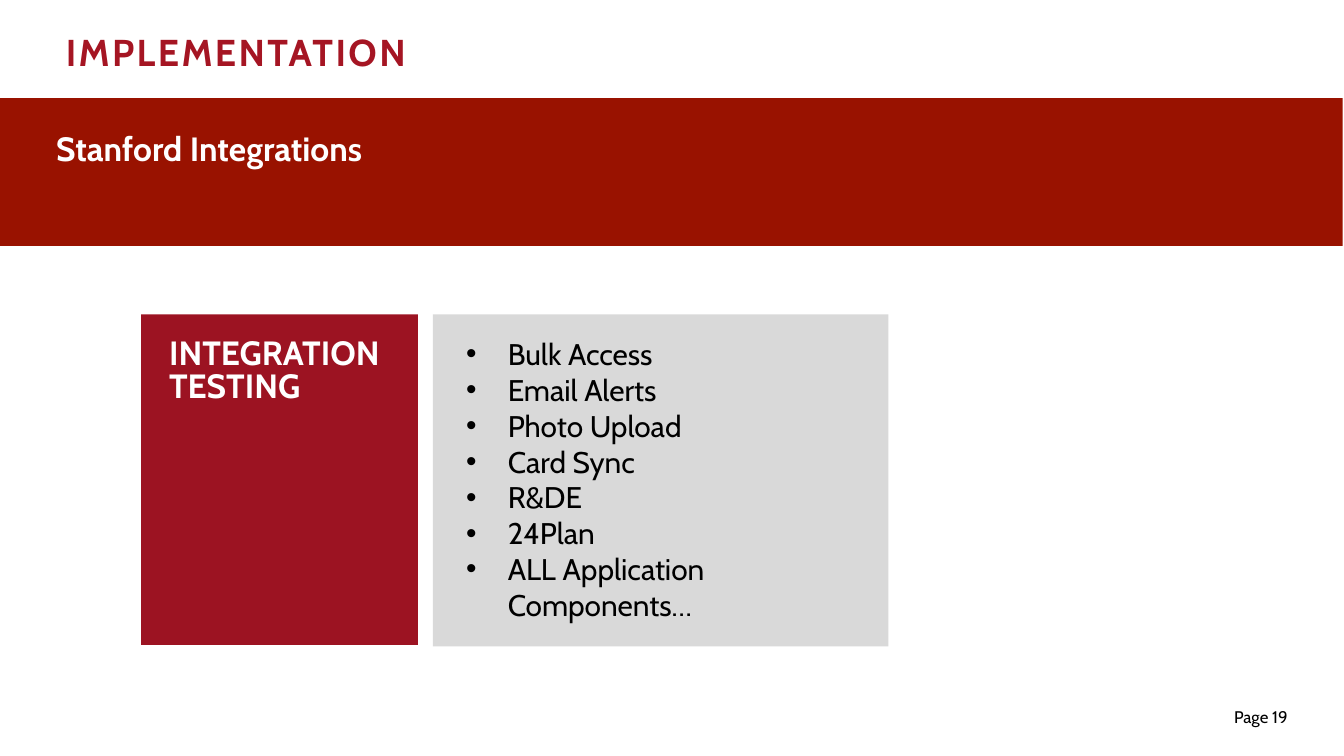
from lxml import etree
from pptx import Presentation
from pptx.dml.color import RGBColor
from pptx.enum import shapes, text
from pptx.oxml import ns
from pptx.util import Inches, Pt

RED = RGBColor(0xA5, 0x15, 0x23)
BRICK = RGBColor(0x99, 0x12, 0x00)
WINE = RGBColor(0x9C, 0x13, 0x22)
GREY = RGBColor(0xD9, 0xD9, 0xD9)
WHITE = RGBColor(0xFF, 0xFF, 0xFF)
BLACK = RGBColor(0, 0, 0)
FONT = "Cabin"

TITLE = "IMPLEMENTATION"
BAND = "Stanford Integrations"
HEAD = "INTEGRATION TESTING"
ITEMS = ["Bulk Access", "Email Alerts", "Photo Upload", "Card Sync",
         "R&DE", "24Plan", "ALL Application Components…"]
PAGE = "Page 19"

PANELS = [
    ((-0.02, 0.73, 10.01, 1.1), BRICK),
    ((3.22, 2.34, 3.39, 2.47), GREY),
    ((1.05, 2.34, 2.06, 2.46), WINE),
]


def place(shape, area):
    shape.left, shape.top, shape.width, shape.height = map(Inches, area)


def write(shape, lines, size, color, bold=False, line=1.0, after=0,
          align=text.PP_ALIGN.LEFT):
    frame = shape.text_frame
    frame.text = "\n".join(lines)
    frame.word_wrap = True
    frame.auto_size = text.MSO_AUTO_SIZE.NONE
    frame.vertical_anchor = text.MSO_ANCHOR.TOP
    for para in frame.paragraphs:
        para.alignment = align
        para.line_spacing = line
        para.space_after = Pt(after)
        for run in para.runs:
            font = run.font
            font.name, font.size, font.bold = FONT, Pt(size), bold
            font.color.rgb = color
    return frame


def bullet(para, indent):
    props = para._p.get_or_add_pPr()
    props.set("marL", str(Inches(indent)))
    props.set("indent", str(-Inches(indent)))
    etree.SubElement(props, ns.qn("a:buFont")).set("typeface", "Arial")
    etree.SubElement(props, ns.qn("a:buChar")).set("char", "•")


def main():
    deck = Presentation()
    deck.slide_width = Inches(10)
    deck.slide_height = deck.slide_width * 9 // 16
    slide = deck.slides.add_slide(deck.slide_layouts[5])

    title = slide.shapes.title
    place(title, (0.39, 0.17, 9.33, 0.44))
    frame = write(title, [TITLE], 20, RED, True)
    frame.paragraphs[0].runs[0].font._element.set("spc", "130")

    for area, color in PANELS:
        panel = slide.shapes.add_shape(
            shapes.MSO_SHAPE.RECTANGLE, *map(Inches, area))
        panel.shadow.inherit = False
        panel.fill.solid()
        panel.fill.fore_color.rgb = color
        panel.line.fill.background()

    def box(*area):
        return slide.shapes.add_textbox(*map(Inches, area))

    write(box(0.32, 0.95, 4.29, 0.36), [BAND], 18, WHITE, True, 0.85, 10)
    write(box(1.16, 2.48, 1.94, 0.59), [HEAD], 18, WHITE, True, 0.8, 12)
    items = write(box(3.37, 2.45, 3.24, 2.26), ITEMS, 16, BLACK)
    for para in items.paragraphs:
        bullet(para, 0.31)
    write(box(8, 5.21, 1.68, 0.25), [PAGE], 9, BLACK,
          align=text.PP_ALIGN.RIGHT)

    deck.save("out.pptx")


if __name__ == "__main__":
    main()
